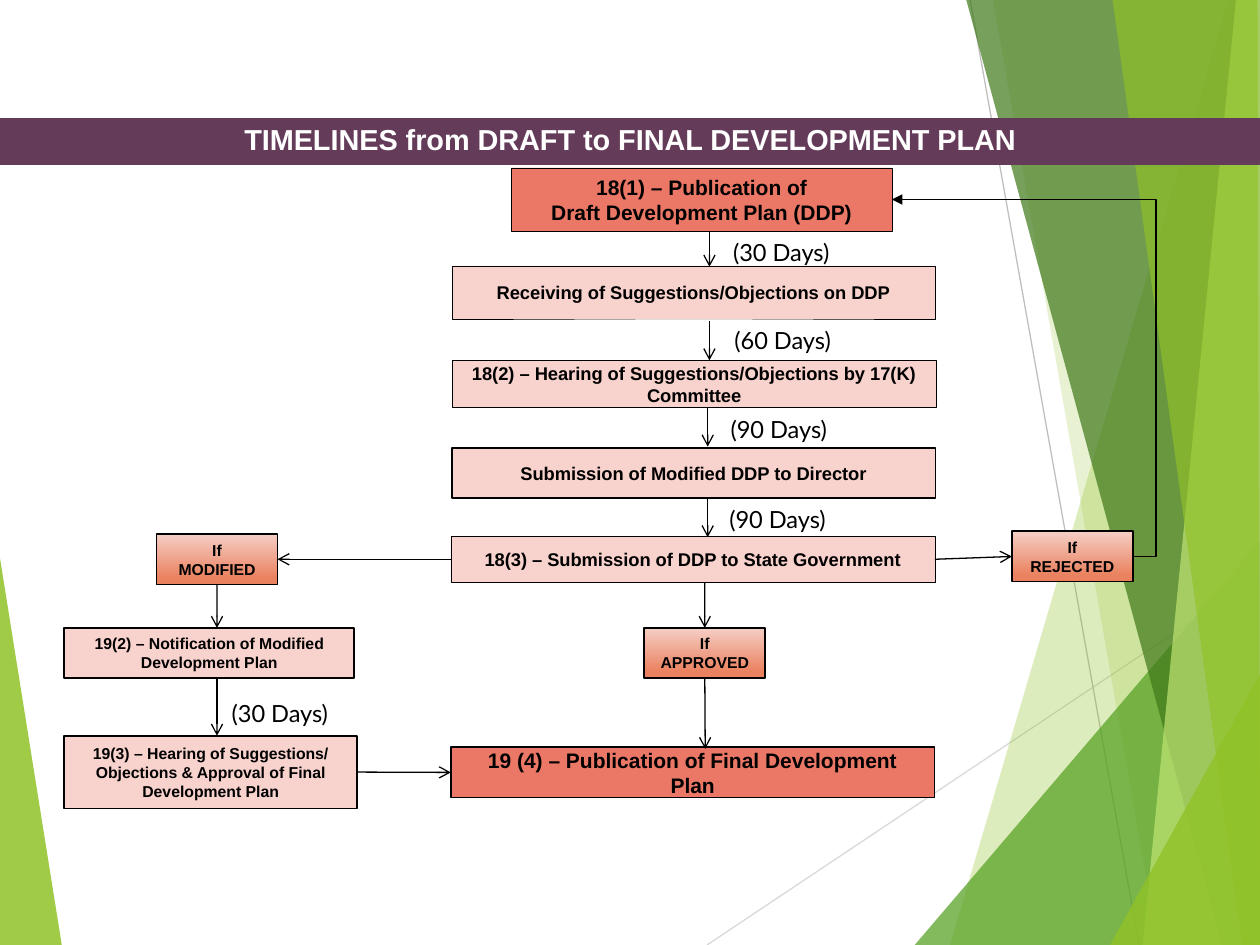
"""Build the flow chart of timelines from draft to final development plan."""
from dataclasses import dataclass
from typing import NamedTuple

from lxml.etree import SubElement
from pptx import Presentation
from pptx.dml.color import RGBColor
from pptx.enum.shapes import MSO_CONNECTOR, MSO_SHAPE
from pptx.enum.text import MSO_ANCHOR, MSO_AUTO_SIZE, PP_ALIGN
from pptx.oxml.ns import qn
from pptx.shapes.autoshape import Shape
from pptx.shapes.connector import Connector
from pptx.slide import Slide
from pptx.util import Pt

RECTANGLE = MSO_SHAPE.RECTANGLE
STRAIGHT, ELBOW = MSO_CONNECTOR.STRAIGHT, MSO_CONNECTOR.ELBOW
MIDDLE, CENTER, NO_AUTOSIZE = MSO_ANCHOR.MIDDLE, PP_ALIGN.CENTER, MSO_AUTO_SIZE.NONE
TOP, LEFT, BOTTOM, RIGHT = range(4)
WIDTH, HEIGHT = 720, 540


@dataclass(frozen=True)
class Theme:
    """Colours, fonts and type sizes of the slide."""
    ink: str = "000000"
    paper: str = "FFFFFF"
    banner: str = "643C5A"
    step: str = "F8D2CC"
    milestone: str = "EB7766"
    outcome_top: str = "F5CEC5"
    outcome_bottom: str = "EA815F"
    lime: str = "90C226"
    green: str = "54A021"
    forest: str = "3F7819"
    pale: str = "C0E474"
    light_rule: str = "D9D9D9"
    dark_rule: str = "BFBFBF"
    heading_font: str = "Arial"
    label_font: str = "Lato"
    title_size: float = 16.5
    label_size: float = 13.5
    milestone_size: float = 12
    step_size: float = 10.5
    small_size: float = 9


THEME = Theme()


class Point(NamedTuple):
    """A place on the slide, in points."""
    x: float
    y: float


class Joint(NamedTuple):
    """The middle of one side of a named box."""
    box: str
    side: int


class Facet(NamedTuple):
    """A translucent background polygon."""
    color: str
    opacity: int
    corners: tuple[tuple[float, float], ...]


class Rule(NamedTuple):
    """A thin background line."""
    color: str
    start: Point
    end: Point


@dataclass(frozen=True)
class Box:
    """One step of the flow; without a fill it takes the outcome gradient."""
    text: str
    left: float
    top: float
    width: float
    height: float
    size: float = THEME.step_size
    fill: str = THEME.step
    outline: float = 0.25


class Label(NamedTuple):
    """A duration beside an arrow."""
    text: str
    left: float
    top: float
    width: float


class Arrow(NamedTuple):
    """A straight arrow between points or box sides."""
    start: Point | Joint
    end: Point | Joint


FACETS = (
    Facet(THEME.lime, 30, ((702, 0), (542.9, HEIGHT), (WIDTH, HEIGHT), (WIDTH, 0))),
    Facet(THEME.lime, 20, ((567.4, 0), (661.7, HEIGHT), (WIDTH, HEIGHT), (WIDTH, 0))),
    Facet(THEME.green, 72, ((522.7, HEIGHT), (WIDTH, 309), (WIDTH, HEIGHT))),
    Facet(THEME.forest, 70, ((552.2, 0), (698.4, HEIGHT), (WIDTH, HEIGHT), (WIDTH, 0))),
    Facet(THEME.pale, 70, ((706.3, 0), (653, HEIGHT), (WIDTH, HEIGHT), (WIDTH, 0))),
    Facet(THEME.lime, 65, ((635.8, 0), (709.9, HEIGHT), (WIDTH, HEIGHT), (718.6, 0))),
    Facet(THEME.lime, 80, ((634.3, HEIGHT), (WIDTH, 385.2), (WIDTH, HEIGHT))),
)
LEFT_FACET = Facet(THEME.lime, 85, ((0, 319), (35.3, HEIGHT), (0, HEIGHT)))
RULES = (
    Rule(THEME.light_rule, Point(404, HEIGHT), Point(WIDTH, 329)),
    Rule(THEME.dark_rule, Point(554.4, 0), Point(650.9, HEIGHT)),
)
OUTCOME = dict(width=69.1, height=28.8, size=THEME.small_size, fill="", outline=1)
MILESTONE = dict(size=THEME.milestone_size, fill=THEME.milestone)
BOXES = {
    "draft": Box("18(1) – Publication of\nDraft Development Plan (DDP)", 292.3, 96, 217.4, 36, **MILESTONE),
    "receiving": Box("Receiving of Suggestions/Objections on DDP", 258.5, 152, 275.8, 30.2),
    "hearing": Box("18(2) – Hearing of Suggestions/Objections by 17(K) Committee", 258.5, 206, 276.5, 26.6),
    "director": Box("Submission of Modified DDP to Director", 258.2, 256, 276.5, 28.8, outline=1),
    "state": Box("18(3) – Submission of DDP to State Government", 257.6, 306.4, 276.7, 26.4),
    "approved": Box("If APPROVED", 368.2, 358.8, **OUTCOME),
    "final": Box("19 (4) – Publication of Final Development Plan", 257.6, 427, 276.5, 28.8, outline=1, **MILESTONE),
    "rejected": Box("If REJECTED", 578.2, 303.6, **OUTCOME),
    "modified": Box("If\nMODIFIED", 89.5, 305.2, **OUTCOME),
    "notification": Box("19(2) – Notification of Modified Development Plan", 36.8, 358.8, 165.6, 28.8,
                        THEME.small_size, outline=1),
    "approval": Box("19(3) – Hearing of Suggestions/ Objections & Approval of Final Development Plan",
                    36.8, 420.4, 167.2, 41.6, THEME.small_size, outline=1),
}
LABELS = (
    Label("(30 Days)", 411.8, 132.5, 82),
    Label("(60 Days)", 412.6, 182.9, 110),
    Label("(90 Days)", 410.4, 233.3, 110),
    Label("(90 Days)", 409.7, 285.1, 110),
    Label("(30 Days)", 125.3, 396, 76),
)
ARROWS = (
    Arrow(Point(405.4, 132.3), Point(405.4, 152.4)),
    Arrow(Point(405.4, 183.6), Point(405.4, 205.9)),
    Arrow(Point(404.4, 232.6), Point(404.4, 255.2)),
    Arrow(Point(404.4, 284.8), Point(404.4, 307)),
    Arrow(Point(402.7, 332.8), Joint("approved", TOP)),
    Arrow(Joint("approved", BOTTOM), Point(403, 428)),
    Arrow(Joint("state", RIGHT), Joint("rejected", LEFT)),
    Arrow(Joint("state", LEFT), Joint("modified", RIGHT)),
    Arrow(Joint("modified", BOTTOM), Point(124, 358.8)),
    Arrow(Point(124, 387.6), Point(124, 420.4)),
    Arrow(Joint("approval", RIGHT), Joint("final", LEFT)),
)


def draw_facet(page: Slide, facet: Facet) -> None:
    """Draw one translucent polygon."""
    corners = [(Pt(x), Pt(y)) for x, y in facet.corners]
    builder = page.shapes.build_freeform(*corners[0])
    builder.add_line_segments(corners[1:])
    shape = builder.convert_to_shape()
    shape.shadow.inherit = False
    shape.line.fill.background()
    shape.fill.solid()
    shape.fill.fore_color.rgb = RGBColor.from_string(facet.color)
    color = shape.element.spPr.find(f".//{qn('a:srgbClr')}")
    SubElement(color, qn("a:alpha"), val=str(facet.opacity * 1000))


def draw_line(page: Slide, start: Point, end: Point, color: str = THEME.ink,
              width: float = 0.75, head: str = "", kind: int = STRAIGHT) -> Connector:
    """Draw a connector, with an arrowhead if one is named."""
    line = page.shapes.add_connector(kind, *map(Pt, (*start, *end)))
    line.line.color.rgb = RGBColor.from_string(color)
    line.line.width = Pt(width)
    properties = line.element.spPr
    if head:
        SubElement(properties.find(qn("a:ln")), qn("a:tailEnd"), type=head)
    SubElement(properties, qn("a:effectLst"))
    return line


def locate(end: Point | Joint) -> Point:
    """Return the place of an arrow's end."""
    if isinstance(end, Point):
        return end
    box = BOXES[end.box]
    across = {LEFT: 0, RIGHT: 1}.get(end.side, 0.5)
    down = {TOP: 0, BOTTOM: 1}.get(end.side, 0.5)
    return Point(box.left + box.width * across, box.top + box.height * down)


def draw_arrow(page: Slide, arrow: Arrow, shapes: dict[str, Shape]) -> None:
    """Draw a straight arrow and join it to its boxes."""
    line = draw_line(page, locate(arrow.start), locate(arrow.end), head="arrow")
    for end, connect in ((arrow.start, line.begin_connect), (arrow.end, line.end_connect)):
        if isinstance(end, Joint):
            connect(shapes[end.box], end.side)


def draw_return(page: Slide) -> None:
    """Draw the elbow arrow from rejection back to the draft."""
    start, end = locate(Joint("rejected", RIGHT)), locate(Joint("draft", RIGHT))
    elbow = draw_line(page, start, end, width=1, head="triangle", kind=ELBOW)
    geometry = elbow.element.spPr.find(qn("a:prstGeom"))
    guides = geometry.find(qn("a:avLst"))
    if guides is None:
        guides = SubElement(geometry, qn("a:avLst"))
    SubElement(guides, qn("a:gd"), name="adj1", fmla="val -9800")


def format_text(shape: Shape, font: str, size: float, color: str, bold: bool) -> None:
    """Set the type of every paragraph in a shape."""
    shape.text_frame.word_wrap = True
    for para in shape.text_frame.paragraphs:
        para.font.name, para.font.size, para.font.bold = font, Pt(size), bold
        para.font.color.rgb = RGBColor.from_string(color)
        if bold:
            para.alignment = CENTER


def draw_box(page: Slide, box: Box) -> Shape:
    """Draw one step of the flow."""
    shape = page.shapes.add_shape(RECTANGLE, *map(Pt, (box.left, box.top, box.width, box.height)))
    shape.shadow.inherit = False
    if box.fill:
        shape.fill.solid()
        shape.fill.fore_color.rgb = RGBColor.from_string(box.fill)
    else:
        shape.fill.gradient()
        shape.fill.gradient_angle = 270
        stops = ((0, THEME.outcome_top), (0.88, THEME.outcome_bottom))
        for stop, (position, color) in zip(shape.fill.gradient_stops, stops):
            stop.position, stop.color.rgb = position, RGBColor.from_string(color)
    shape.line.color.rgb = RGBColor.from_string(THEME.ink)
    shape.line.width = Pt(box.outline)
    shape.text_frame.text = box.text
    shape.text_frame.vertical_anchor = MIDDLE
    format_text(shape, THEME.heading_font, box.size, THEME.ink, True)
    return shape


def draw_label(page: Slide, label: Label) -> None:
    """Write one duration."""
    box = page.shapes.add_textbox(*map(Pt, (label.left, label.top, label.width, 23.8)))
    box.text_frame.text = label.text
    format_text(box, THEME.label_font, THEME.label_size, THEME.ink, False)


def draw_title(page: Slide) -> None:
    """Turn the title placeholder into the banner above the background."""
    title = page.shapes.title
    title.element.getparent().append(title.element)
    title.left, title.top, title.width, title.height = map(Pt, (0, 67.5, WIDTH, 26.8))
    title.fill.solid()
    title.fill.fore_color.rgb = RGBColor.from_string(THEME.banner)
    title.text_frame.text = "TIMELINES from DRAFT to FINAL DEVELOPMENT PLAN"
    title.text_frame.auto_size = NO_AUTOSIZE
    title.text_frame.vertical_anchor = MIDDLE
    title.text_frame.paragraphs[0].line_spacing = 0.9
    format_text(title, THEME.heading_font, THEME.title_size, THEME.paper, True)


def main() -> None:
    """Build and save the deck."""
    deck = Presentation()
    deck.slide_width, deck.slide_height = Pt(WIDTH), Pt(HEIGHT)
    page = deck.slides.add_slide(deck.slide_layouts.get_by_name("Title Only"))
    draw_facet(page, LEFT_FACET)
    for rule in RULES:
        draw_line(page, rule.start, rule.end, rule.color)
    for facet in FACETS:
        draw_facet(page, facet)
    draw_title(page)
    shapes = {name: draw_box(page, box) for name, box in BOXES.items()}
    for arrow in ARROWS:
        draw_arrow(page, arrow, shapes)
    draw_return(page)
    for label in LABELS:
        draw_label(page, label)
    deck.save("out.pptx")


if __name__ == "__main__":
    main()
